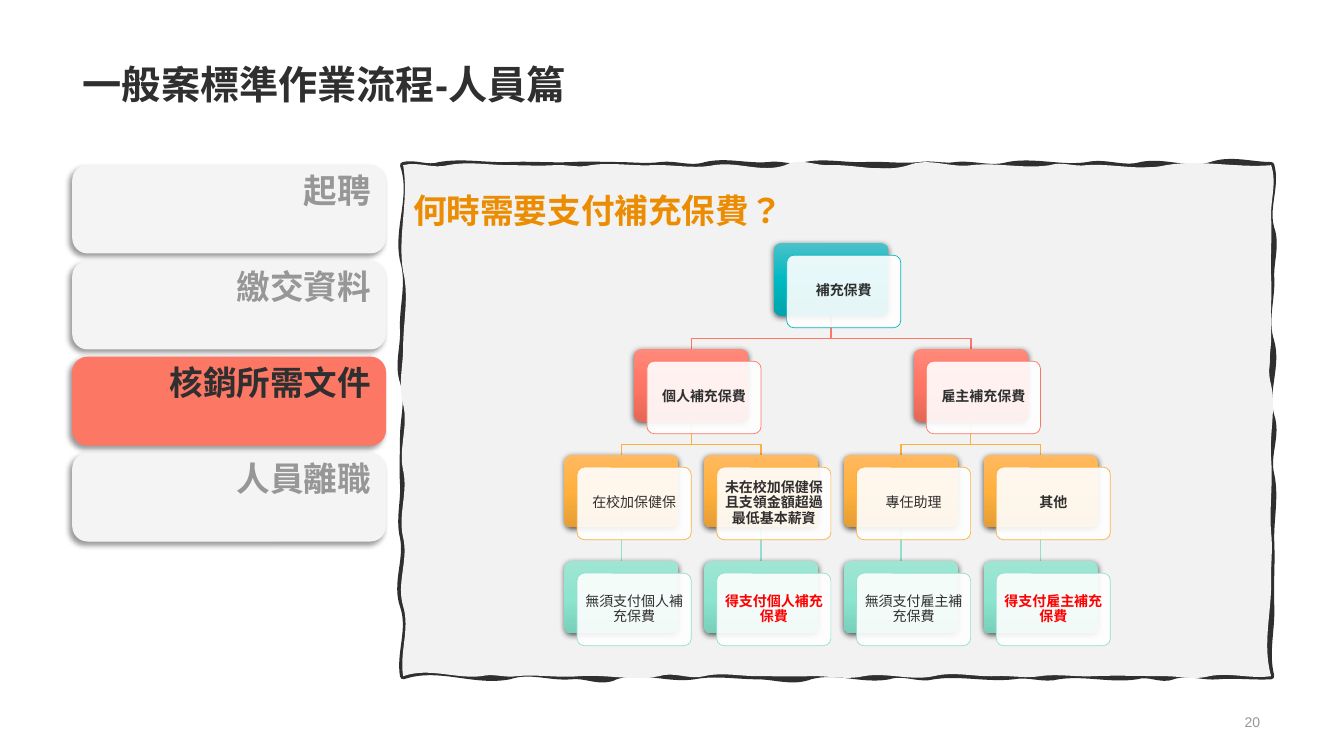
from dataclasses import dataclass
from lxml import etree
from pptx import Presentation
from pptx.dml.color import RGBColor
from pptx.enum.shapes import MSO_SHAPE
from pptx.enum.text import MSO_ANCHOR, MSO_AUTO_SIZE, PP_ALIGN
from pptx.oxml.ns import qn
from pptx.util import Pt

LEFT, CENTER, RIGHT = PP_ALIGN.LEFT, PP_ALIGN.CENTER, PP_ALIGN.RIGHT
TOP, MIDDLE, BOTTOM = MSO_ANCHOR.TOP, MSO_ANCHOR.MIDDLE, MSO_ANCHOR.BOTTOM
ROUNDED, NO_FIT = MSO_SHAPE.ROUNDED_RECTANGLE, MSO_AUTO_SIZE.NONE
SANS, CJK = "Arial", "Noto Sans CJK SC"
INK, GREY, PALE, CORAL, RED = "2F2F2F", "979797", "F4F4F4", "FD7765", "FF0000"


@dataclass(frozen=True)
class Step:
    text: str
    active: bool = False


@dataclass(frozen=True)
class Level:
    line: str
    gradient: tuple[str, str, str]


@dataclass(frozen=True)
class Card:
    text: str
    row: int
    column: float
    parent: int | None = None
    color: str = INK
    bold: bool = True
    font: str = SANS


STEPS = [Step("起聘"), Step("繳交資料"), Step("核銷所需文件", True), Step("人員離職")]
LEVELS = [
    Level("01B8C1", ("4BC1CA", "00B9C2", "00A4AC")),
    Level(CORAL, ("FF897A", "FF7563", "E56756")),
    Level("FDB03F", ("FFB95F", "FFB03D", "E59D34")),
    Level("91E0CD", ("9FE5D3", "8DE4CF", "78D0BB")),
]
CARDS = [
    Card("補充保費", 0, 1.5),
    Card("個人補充保費", 1, 0.5, 0),
    Card("雇主補充保費", 1, 2.5, 0),
    Card("在校加保健保", 2, 0, 1, bold=False),
    Card("未在校加保健保且支領金額超過最低基本薪資", 2, 1, 1),
    Card("專任助理", 2, 2, 2, bold=False),
    Card("其他", 2, 3, 2),
    Card("無須支付個人補充保費", 3, 0, 3, bold=False),
    Card("得支付個人補充保費", 3, 1, 4, RED, font=CJK),
    Card("無須支付雇主補充保費", 3, 2, 5, bold=False),
    Card("得支付雇主補充保費", 3, 3, 6, RED, font=CJK),
]
CARD_W, CARD_H, COLUMN_STEP, ROW_STEP = 81.5, 51.8, 99.8, 75.7
TREE_X, TREE_Y, GLASS_DX, GLASS_DY = 403.2, 173.6, 9, 8.7

# Each side of the frame, clockwise from top left: (position, bend) knots
Side = list[tuple[float, float]]
FRAME_X, FRAME_Y, FRAME_R, FRAME_B = 288, 118, 908, 483
BORDER: list[Side] = [
    [(288, 2.2), (314, 2.9), (364, .7), (409, .7), (441, 0), (472, 1.4), (504, 3.6), (549, 1.4),
     (575, 2.9), (618, .7), (657, 1.4), (683, 1.4), (720, 3.6), (777, 2.9), (815, 3.6), (865, 5),
     (908, 0)],
    [(118, -4.3), (163, -4.3), (199, -.7), (244, -5), (297, -5), (339, -3.6), (388, -.7),
     (433, -.7), (483, -4.3)],
    [(908, -.7), (870, -1.1), (838, -3.6), (812, -2.9), (756, -2.9), (724, -2.2), (667, -2.9),
     (635, -3.6), (579, -5), (541, 0), (496, -2.9), (440, -5.8), (408, -1.4), (364, -5),
     (288, -8.6)],
    [(483, 2.9), (433, 5.8), (384, 3.2), (346, .7), (312, 0), (273, 4.3), (235, .7), (186, 5),
     (118, 7.9)],
]
PANEL: list[Side] = [
    [(288, 2.9), (320, 2.9), (364, 0), (396, .7), (422, 2.2), (466, .7), (510, 2.9), (561, 5.8),
     (593, .7), (649, 5.8), (694, 2.2), (750, 2.9), (776, 1.4), (833, 4.3), (908, 2.2)],
    [(118, -4.3), (156, -.7), (199, -.7), (237, -.7), (275, -3.6), (328, -1.4), (381, -1.4),
     (415, -.4), (483, -6.5)],
    [(908, -2.2), (864, -2.9), (832, 0), (781, -.7), (743, -1.8), (711, -.7), (667, -3.6),
     (617, -2.9), (579, -.4), (541, 0), (503, -2.9), (471, -3.6), (414, -1.4), (369, -1.4),
     (344, -2.2), (288, -6.5)],
    [(483, 2.9), (433, 5), (384, 3.9), (336, 3.6), (289, 3.9), (248, 0), (194, 4.3), (118, 4.3)],
]


def rgb(color: str) -> RGBColor:
    return RGBColor.from_string(color)


def paint(sp, fill: str | None = None, line: str | None = None, width: float = 1) -> None:
    sp.shadow.inherit = False
    if fill:
        sp.fill.solid()
        sp.fill.fore_color.rgb = rgb(fill)
    else:
        sp.fill.background()
    if line:
        sp.line.color.rgb = rgb(line)
        sp.line.width = Pt(width)
    else:
        sp.line.fill.background()


def color_xml(parent, color: str, alpha: int = 100) -> None:
    node = etree.SubElement(parent, qn("a:srgbClr"), val=color)
    if alpha < 100:
        etree.SubElement(node, qn("a:alpha"), val=str(alpha * 1000))


def add_shadow(sp, alpha: int, blur: float, dist: float, angle: int) -> None:
    effects = sp._element.spPr.find(qn("a:effectLst"))
    shadow = etree.SubElement(effects, qn("a:outerShdw"), blurRad=str(Pt(blur)),
                              dist=str(Pt(dist)), dir=str(angle * 60000), rotWithShape="0")
    color_xml(shadow, "000000", alpha)


def fill_gradient(sp, colors: tuple[str, str, str]) -> None:
    sp.fill.gradient()
    sp.fill.gradient_angle = 270
    stops = sp._element.spPr.find(qn("a:gradFill")).find(qn("a:gsLst"))
    for stop in list(stops):
        stops.remove(stop)
    for i, color in enumerate(colors):
        color_xml(etree.SubElement(stops, qn("a:gs"), pos=str(i * 50000)), color)


def write(sp, text: str, size: float, color: str, align=LEFT, anchor=TOP, spacing: float = 0.9,
          bold: bool = True, font: str = SANS, inset: tuple[float, float] = (7.2, 3.6)) -> None:
    tf = sp.text_frame
    dx, dy = map(Pt, inset)
    frame = {"word_wrap": True, "auto_size": NO_FIT, "vertical_anchor": anchor,
             "margin_left": dx, "margin_right": dx, "margin_top": dy, "margin_bottom": dy}
    for name, value in frame.items():
        setattr(tf, name, value)
    p = tf.paragraphs[0]
    p.alignment, p.line_spacing = align, spacing
    r = p.add_run()
    r.text = text
    for name, value in {"name": font, "size": Pt(size), "bold": bold}.items():
        setattr(r.font, name, value)
    r.font.color.rgb = rgb(color)
    props = r._r.get_or_add_rPr()
    props.set("lang", "zh-TW")
    if font == CJK:
        etree.SubElement(props, qn("a:ea"), typeface=CJK)


def add_rounded(shapes, x: float, y: float, w: float, h: float, corner: float):
    sp = shapes.add_shape(ROUNDED, Pt(x), Pt(y), Pt(w), Pt(h))
    sp.adjustments[0] = corner
    return sp


def add_outline(shapes, points: list[tuple[float, float]], close: bool = False):
    points = [(Pt(x), Pt(y)) for x, y in points]
    builder = shapes.build_freeform(*points[0])
    builder.add_line_segments(points[1:], close=close)
    return builder.convert_to_shape()


def add_wave(outlines, sides: list[Side], **flags: str) -> None:
    """Add a closed path of cubic waves that pass smoothly through the knots."""
    outline = etree.SubElement(outlines, qn("a:path"), w=str(Pt(FRAME_R - FRAME_X)),
                               h=str(Pt(FRAME_B - FRAME_Y)), **flags)

    def add_point(parent, x: float, y: float) -> None:
        etree.SubElement(parent, qn("a:pt"), x=str(Pt(x - FRAME_X)), y=str(Pt(y - FRAME_Y)))

    add_point(etree.SubElement(outline, qn("a:moveTo")), FRAME_X, FRAME_Y)
    for i, (side, base) in enumerate(zip(sides, (FRAME_Y, FRAME_R, FRAME_B, FRAME_X))):
        for (a, bend_a), (b, bend_b) in zip(side, side[1:]):
            curve = etree.SubElement(outline, qn("a:cubicBezTo"))
            third = (b - a) / 3
            for along, across in ((a + third, base - bend_a), (b - third, base + bend_b), (b, base)):
                add_point(curve, *((across, along) if i % 2 else (along, across)))
    etree.SubElement(outline, qn("a:close"))


def add_frame(shapes):
    corners = [(FRAME_X, FRAME_Y), (FRAME_R, FRAME_Y), (FRAME_R, FRAME_B), (FRAME_X, FRAME_B)]
    sp = add_outline(shapes, corners, True)
    outlines = sp._element.spPr.find(qn("a:custGeom")).find(qn("a:pathLst"))
    outlines.remove(outlines[0])
    add_wave(outlines, BORDER, fill="none")
    add_wave(outlines, PANEL, stroke="0")
    paint(sp, "F2F2F2", INK, 4.5)
    return sp


def add_link(shapes, parent: Card, child: Card) -> None:
    x1, x2 = (TREE_X + c.column * COLUMN_STEP + CARD_W / 2 for c in (parent, child))
    y2 = TREE_Y + child.row * ROW_STEP
    y1, bend = y2 - ROW_STEP + CARD_H, y2 - 7.6
    elbow = [(x1, bend), (x2, bend)] if parent.column != child.column else []
    sp = add_outline(shapes, [(x1, y1), *elbow, (x2, y2)])
    paint(sp, line=LEVELS[child.row].line)


def add_tree(shapes) -> None:
    for card in CARDS:
        if card.parent is not None:
            add_link(shapes, CARDS[card.parent], card)
    for card in CARDS:
        x, y = TREE_X + card.column * COLUMN_STEP, TREE_Y + card.row * ROW_STEP
        level = LEVELS[card.row]
        sp = add_rounded(shapes, x, y, CARD_W, CARD_H, 0.1)
        paint(sp)
        fill_gradient(sp, level.gradient)
        add_shadow(sp, 63, 4.5, 1.5, 90)
        glass = add_rounded(shapes, x + GLASS_DX, y + GLASS_DY, CARD_W, CARD_H, 0.1)
        paint(glass, "FFFFFF", level.line, 0.5)
        white = glass._element.spPr.find(qn("a:solidFill"))[0]
        etree.SubElement(white, qn("a:alpha"), val="90000")
        write(glass, card.text, 10, card.color, CENTER, MIDDLE, bold=card.bold, font=card.font,
              inset=(3, 3))


def main() -> None:
    prs = Presentation()
    prs.slide_width, prs.slide_height = Pt(960), Pt(540)
    slide = prs.slides.add_slide(prs.slide_layouts[5])
    shapes = slide.shapes
    title = shapes.title
    title.left, title.top, title.width, title.height = Pt(52), Pt(0), Pt(855), Pt(80.6)
    write(title, "一般案標準作業流程-人員篇", 28, INK, anchor=BOTTOM)
    number = shapes.add_textbox(Pt(697.7), Pt(507), Pt(209.5), Pt(17.3))
    write(number, "20", 10, GREY, RIGHT, MIDDLE, 1, bold=False)

    for i, step in enumerate(STEPS):
        sp = add_rounded(shapes, 52, 118.1 + i * 68.6, 223.3, 62.6, 0.17)
        color = CORAL if step.active else PALE
        paint(sp, color, color, 1 if step.active else 0.75)
        add_shadow(sp, 40, 4, 3, 135)
        write(sp, step.text, 24, INK if step.active else GREY, RIGHT)

    frame = add_frame(shapes)
    write(frame, "何時需要支付補充保費？", 24, "EB8C02", spacing=1.5, font=CJK)
    add_tree(shapes)
    prs.save("out.pptx")


if __name__ == "__main__":
    main()
